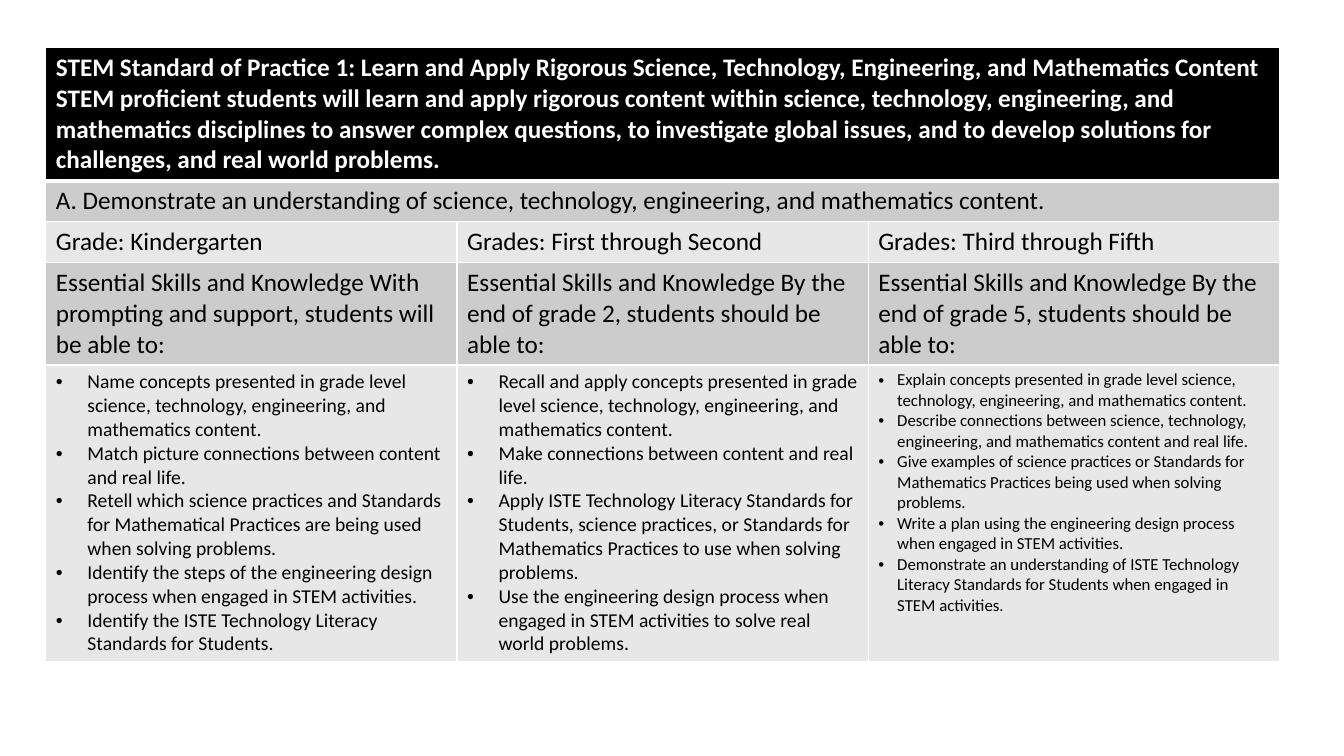
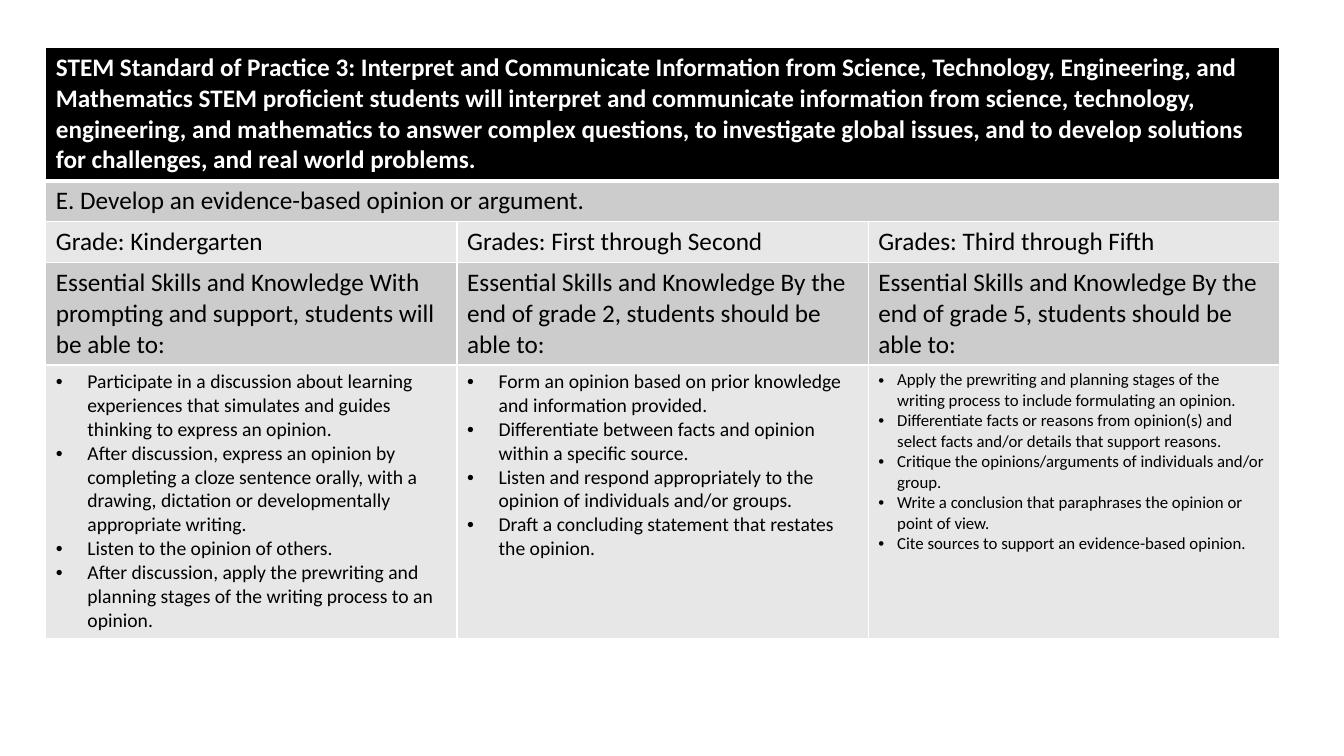
from lxml import etree
from pptx import Presentation
from pptx.dml.color import RGBColor
from pptx.oxml.ns import qn
from pptx.util import Pt

BLACK = RGBColor(0x00, 0x00, 0x00)
WHITE = RGBColor(0xFF, 0xFF, 0xFF)
DARK_BAND = RGBColor(0xCC, 0xCC, 0xCC)
LIGHT_BAND = RGBColor(0xE7, 0xE7, 0xE7)
ROW_FILLS = (BLACK, DARK_BAND, LIGHT_BAND, DARK_BAND, LIGHT_BAND)
FONT = "Calibri"

# Content shared by both slides
GRADES = ("Grade: Kindergarten", "Grades: First through Second", "Grades: Third through Fifth")
LEAD_INS = (
    "Essential Skills and Knowledge With prompting and support, students will be able to:",
    "Essential Skills and Knowledge By the end of grade 2, students should be able to:",
    "Essential Skills and Knowledge By the end of grade 5, students should be able to:",
)

# Content of each slide
STANDARDS = [
    {
        "standard": "STEM Standard of Practice 1: Learn and Apply Rigorous Science, Technology, "
                    "Engineering, and Mathematics Content STEM proficient students will learn and "
                    "apply rigorous content within science, technology, engineering, and "
                    "mathematics disciplines to answer complex questions, to investigate global "
                    "issues, and to develop solutions for challenges, and real world problems.",
        "practice": "A. Demonstrate an understanding of science, technology, engineering, and "
                    "mathematics content.",
        "skills_height": 212.25,
        "skills": (
            ("Name concepts presented in grade level science, technology, engineering, and "
             "mathematics content.",
             "Match picture connections between content and real life.",
             "Retell which science practices and Standards for Mathematical Practices are being "
             "used when solving problems.",
             "Identify the steps of the engineering design process when engaged in STEM "
             "activities.",
             "Identify the ISTE Technology Literacy Standards for Students."),
            ("Recall and apply concepts presented in grade level science, technology, "
             "engineering, and mathematics content.",
             "Make connections between content and real life.",
             "Apply ISTE Technology Literacy Standards for Students, science practices, or "
             "Standards for Mathematics Practices to use when solving problems.",
             "Use the engineering design process when engaged in STEM activities to solve real "
             "world problems."),
            ("Explain concepts presented in grade level science, technology, engineering, and "
             "mathematics content.",
             "Describe connections between science, technology, engineering, and mathematics "
             "content and real life.",
             "Give examples of science practices or Standards for Mathematics Practices being "
             "used when solving problems.",
             "Write a plan using the engineering design process when engaged in STEM activities.",
             "Demonstrate an understanding of ISTE Technology Literacy Standards for Students "
             "when engaged in STEM activities."),
        ),
    },
    {
        "standard": "STEM Standard of Practice 3: Interpret and Communicate Information from "
                    "Science, Technology, Engineering, and Mathematics STEM proficient students "
                    "will interpret and communicate information from science, technology, "
                    "engineering, and mathematics to answer complex questions, to investigate "
                    "global issues, and to develop solutions for challenges, and real world "
                    "problems.",
        "practice": "E. Develop an evidence-based opinion or argument.",
        "skills_height": 195.25,
        "skills": (
            ("Participate in a discussion about learning experiences that simulates and guides "
             "thinking to express an opinion.",
             "After discussion, express an opinion by completing a cloze sentence orally, with a "
             "drawing, dictation or developmentally appropriate writing.",
             "Listen to the opinion of others.",
             "After discussion, apply the prewriting and planning stages of the writing process "
             "to an opinion."),
            ("Form an opinion based on prior knowledge and information provided.",
             "Differentiate between facts and opinion within a specific source.",
             "Listen and respond appropriately to the opinion of individuals and/or groups.",
             "Draft a concluding statement that restates the opinion."),
            ("Apply the prewriting and planning stages of the writing process to include "
             "formulating an opinion.",
             "Differentiate facts or reasons from opinion(s) and select facts and/or details that "
             "support reasons.",
             "Critique the opinions/arguments of individuals and/or group.",
             "Write a conclusion that paraphrases the opinion or point of view.",
             "Cite sources to support an evidence-based opinion."),
        ),
    },
]

# Layout, in points
TABLE_LEFT, TABLE_TOP = 32.75, 34
COLUMN_WIDTH = 293.75
HEADING_HEIGHTS = (95, 29.25, 29.25, 73)
HEADING_SIZE = 18
SKILL_STYLES = ((14, 22.5), (14, 22.5), (12, 13.5))  # text size, bullet indent
THIN_RULE, THICK_RULE = 1, 3


def add_text(paragraph, text, size, color=BLACK, bold=False):
    run = paragraph.add_run()
    run.text = text
    run.font.name = FONT
    run.font.size = Pt(size)
    run.font.color.rgb = color
    run.font.bold = bold


def add_bullets(cell, items, size, indent):
    frame = cell.text_frame
    for index, item in enumerate(items):
        paragraph = frame.add_paragraph() if index else frame.paragraphs[0]
        properties = paragraph._p.get_or_add_pPr()
        properties.set("marL", str(Pt(indent)))
        properties.set("indent", str(-Pt(indent)))
        etree.SubElement(properties, qn("a:buFont")).set("typeface", "Arial")
        etree.SubElement(properties, qn("a:buChar")).set("char", "•")
        add_text(paragraph, item, size)


def style_cell(cell, row):
    """White rules, thick below the heading, then the row's fill."""
    widths = {"L": THIN_RULE, "R": THIN_RULE,
              "T": THICK_RULE if row == 1 else THIN_RULE,
              "B": THICK_RULE if row == 0 else THIN_RULE}
    properties = cell._tc.get_or_add_tcPr()
    for side, width in widths.items():
        rule = etree.SubElement(properties, qn(f"a:ln{side}"), w=str(Pt(width)))
        fill = etree.SubElement(rule, qn("a:solidFill"))
        etree.SubElement(fill, qn("a:srgbClr")).set("val", str(WHITE))
    cell.fill.solid()
    cell.fill.fore_color.rgb = ROW_FILLS[row]


def add_standard_slide(deck, content):
    slide = deck.slides.add_slide(deck.slide_layouts[6])
    heights = HEADING_HEIGHTS + (content["skills_height"],)
    columns = len(GRADES)
    table = slide.shapes.add_table(
        len(heights), columns, Pt(TABLE_LEFT), Pt(TABLE_TOP),
        Pt(COLUMN_WIDTH * columns), Pt(sum(heights))).table
    table.horz_banding = False
    for column in table.columns:
        column.width = Pt(COLUMN_WIDTH)
    for row, height in enumerate(heights):
        table.rows[row].height = Pt(height)
        for column in range(columns):
            style_cell(table.cell(row, column), row)

    # Full-width rows
    for row in (0, 1):
        table.cell(row, 0).merge(table.cell(row, columns - 1))
    add_text(table.cell(0, 0).text_frame.paragraphs[0], content["standard"],
             HEADING_SIZE, WHITE, True)
    add_text(table.cell(1, 0).text_frame.paragraphs[0], content["practice"], HEADING_SIZE)

    # Grade columns
    for column, (grade, lead_in, skills, style) in enumerate(
            zip(GRADES, LEAD_INS, content["skills"], SKILL_STYLES)):
        for row, text in ((2, grade), (3, lead_in)):
            add_text(table.cell(row, column).text_frame.paragraphs[0], text, HEADING_SIZE)
        add_bullets(table.cell(4, column), skills, *style)


def main():
    deck = Presentation()
    deck.slide_width, deck.slide_height = Pt(960), Pt(540)
    for content in STANDARDS:
        add_standard_slide(deck, content)
    deck.save("out.pptx")


if __name__ == "__main__":
    main()
